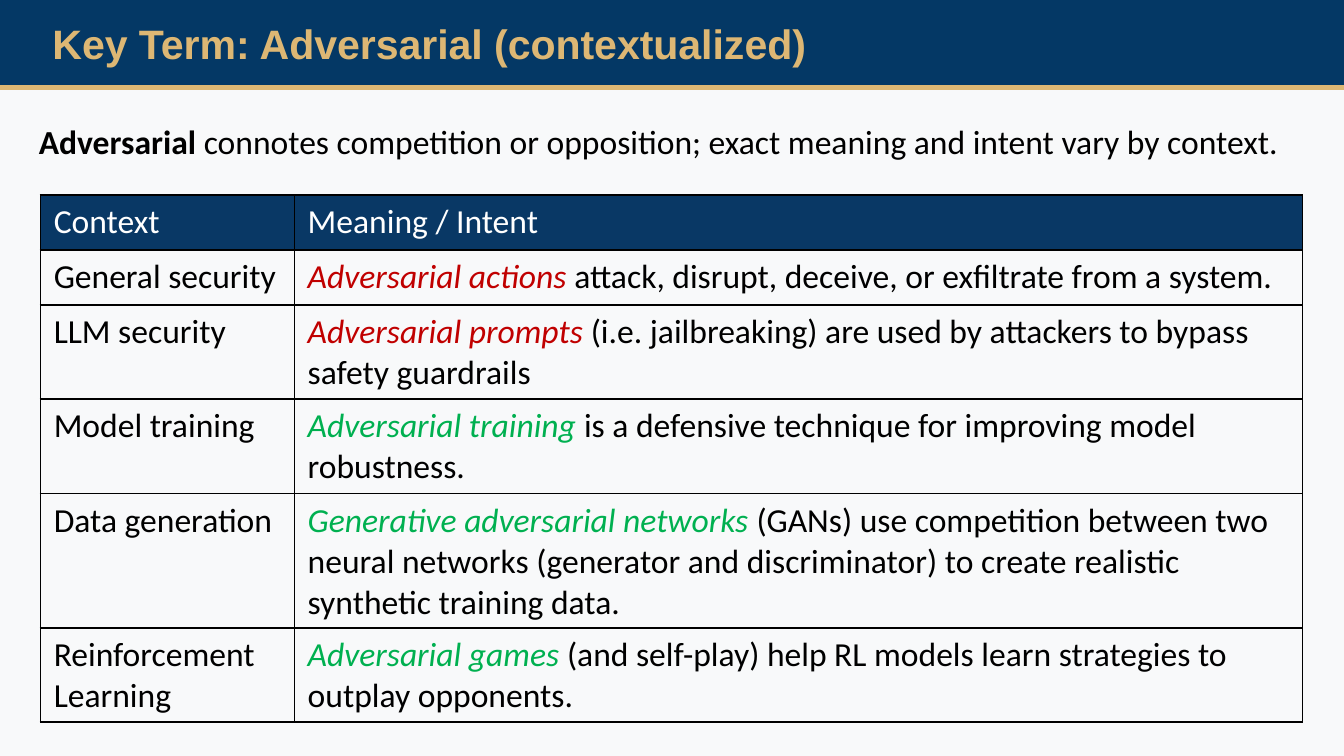
from dataclasses import dataclass

from lxml import etree
from pptx import Presentation
from pptx.dml.color import RGBColor
from pptx.enum.shapes import MSO_CONNECTOR, MSO_SHAPE
from pptx.enum.text import MSO_ANCHOR, PP_ALIGN
from pptx.oxml.ns import qn
from pptx.util import Inches, Pt

RECTANGLE = MSO_SHAPE.RECTANGLE
STRAIGHT = MSO_CONNECTOR.STRAIGHT
TOP = MSO_ANCHOR.TOP
LEFT = PP_ALIGN.LEFT

SLIDE_WIDTH = 10
SLIDE_HEIGHT = SLIDE_WIDTH * 9 / 16
BANNER_HEIGHT = 0.67
TABLE_LEFT, TABLE_TOP, TABLE_HEIGHT = 0.3, 1.45, 3.91
COLUMN_WIDTHS = (1.89, 7.5)
ROW_HEIGHT = 0.41  # rows grow with their text

NAVY, HEADER_NAVY, GOLD = "043865", "093865", "DDB774"
PAPER, BLACK, WHITE = "F8F9FA", "000000", "FFFFFF"
ATTACK_RED, DEFENCE_GREEN = "C00000", "00B050"


@dataclass(frozen=True)
class ContextRow:
    context: str
    term: str
    meaning: str
    term_color: str


CONTEXT_ROWS = (
    ContextRow("General security", "Adversarial actions ",
               "attack, disrupt, deceive, or exfiltrate from a system.", ATTACK_RED),
    ContextRow("LLM security", "Adversarial prompts ",
               "(i.e. jailbreaking) are used by attackers to bypass safety guardrails",
               ATTACK_RED),
    ContextRow("Model training", "Adversarial training ",
               "is a defensive technique for improving model robustness.", DEFENCE_GREEN),
    ContextRow("Data generation", "Generative adversarial networks ",
               "(GANs) use competition between two neural networks (generator and "
               "discriminator) to create realistic synthetic training data.",
               DEFENCE_GREEN),
    ContextRow("Reinforcement Learning", "Adversarial games ",
               "(and self-play) help RL models learn strategies to outplay opponents.",
               DEFENCE_GREEN),
)


def rgb(color: str) -> RGBColor:
    return RGBColor.from_string(color)


def add_text(paragraph, text: str, *, size: float = 18, font: str = "Calibri",
             color: str = BLACK, bold: bool = False, italic: bool = False) -> None:
    run = paragraph.add_run()
    run.text = text
    run.font.size = Pt(size)
    run.font.name = font
    run.font.color.rgb = rgb(color)
    run.font.bold = bold
    run.font.italic = italic


def add_text_box(slide, left: float, top: float, width: float, height: float):
    text_box = slide.shapes.add_textbox(*map(Inches, (left, top, width, height)))
    text_frame = text_box.text_frame
    text_frame.word_wrap = True
    text_frame.vertical_anchor = TOP
    text_frame.paragraphs[0].alignment = LEFT
    return text_frame


def add_banner(slide) -> None:
    banner = slide.shapes.add_shape(RECTANGLE, 0, 0, Inches(SLIDE_WIDTH),
                                    Inches(BANNER_HEIGHT))
    banner.shadow.inherit = False
    banner.fill.solid()
    banner.fill.fore_color.rgb = rgb(NAVY)
    banner.line.fill.background()

    rule_top = Inches(0.65)
    rule = slide.shapes.add_connector(STRAIGHT, 0, rule_top, Inches(SLIDE_WIDTH), rule_top)
    rule.line.color.rgb = rgb(GOLD)
    rule.line.width = Pt(3)
    etree.SubElement(rule.element.spPr, qn("a:effectLst"))

    title = add_text_box(slide, 0.39, 0.14, 9.41, 0.35)
    title.margin_left = title.margin_right = title.margin_top = title.margin_bottom = 0
    add_text(title.paragraphs[0], "Key Term: Adversarial (contextualized)",
             size=22, font="Arial", color=GOLD, bold=True)


def add_definition(slide) -> None:
    paragraph = add_text_box(slide, 0.19, 0.87, 9.61, 0.38).paragraphs[0]
    paragraph.line_spacing = Pt(20.1)
    paragraph.space_after = Pt(6)
    add_text(paragraph, "Adversarial", bold=True)
    add_text(paragraph, " connotes competition or opposition; "
                        "exact meaning and intent vary by context.")


def add_borders(cell, color: str = BLACK, width: float = 1) -> None:
    properties = cell._tc.get_or_add_tcPr()
    for position, side in enumerate(("a:lnL", "a:lnR", "a:lnT", "a:lnB")):
        border = etree.Element(qn(side), w=str(Pt(width)))
        fill = etree.SubElement(border, qn("a:solidFill"))
        etree.SubElement(fill, qn("a:srgbClr"), val=color)
        properties.insert(position, border)  # borders come before the fill


def add_context_table(slide) -> None:
    frame = slide.shapes.add_table(
        len(CONTEXT_ROWS) + 1, len(COLUMN_WIDTHS), Inches(TABLE_LEFT), Inches(TABLE_TOP),
        Inches(sum(COLUMN_WIDTHS)), Inches(TABLE_HEIGHT))
    table = frame.table
    table.first_row = table.horz_banding = False
    for column, width in zip(table.columns, COLUMN_WIDTHS):
        column.width = Inches(width)
    for row in table.rows:
        row.height = Inches(ROW_HEIGHT)
    frame.height = Inches(TABLE_HEIGHT)

    # Header row
    for column, heading in enumerate(("Context", "Meaning / Intent")):
        cell = table.cell(0, column)
        cell.fill.solid()
        cell.fill.fore_color.rgb = rgb(HEADER_NAVY)
        add_text(cell.text_frame.paragraphs[0], heading, color=WHITE)

    # One row for each context
    for number, entry in enumerate(CONTEXT_ROWS, start=1):
        context_cell, meaning_cell = table.cell(number, 0), table.cell(number, 1)
        context_cell.fill.background()
        meaning_cell.fill.background()
        add_text(context_cell.text_frame.paragraphs[0], entry.context)
        meaning = meaning_cell.text_frame.paragraphs[0]
        add_text(meaning, entry.term, color=entry.term_color, italic=True)
        add_text(meaning, entry.meaning)

    for cell in table.iter_cells():
        add_borders(cell)


def main() -> None:
    presentation = Presentation()
    presentation.slide_width = Inches(SLIDE_WIDTH)
    presentation.slide_height = Inches(SLIDE_HEIGHT)
    slide = presentation.slides.add_slide(presentation.slide_layouts[6])
    slide.background.fill.solid()
    slide.background.fill.fore_color.rgb = rgb(PAPER)

    add_banner(slide)
    add_definition(slide)
    add_context_table(slide)
    presentation.save("out.pptx")


if __name__ == "__main__":
    main()
